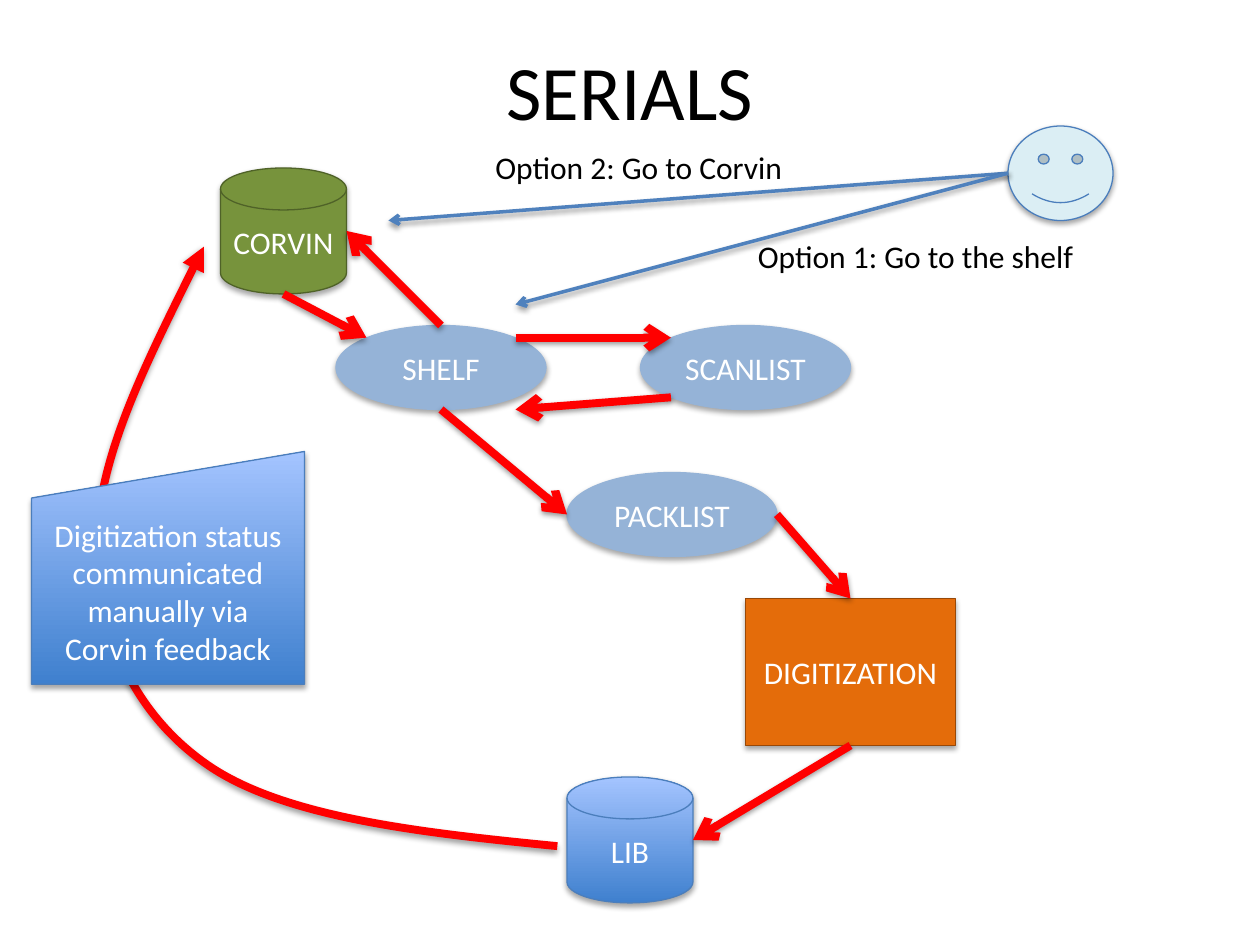
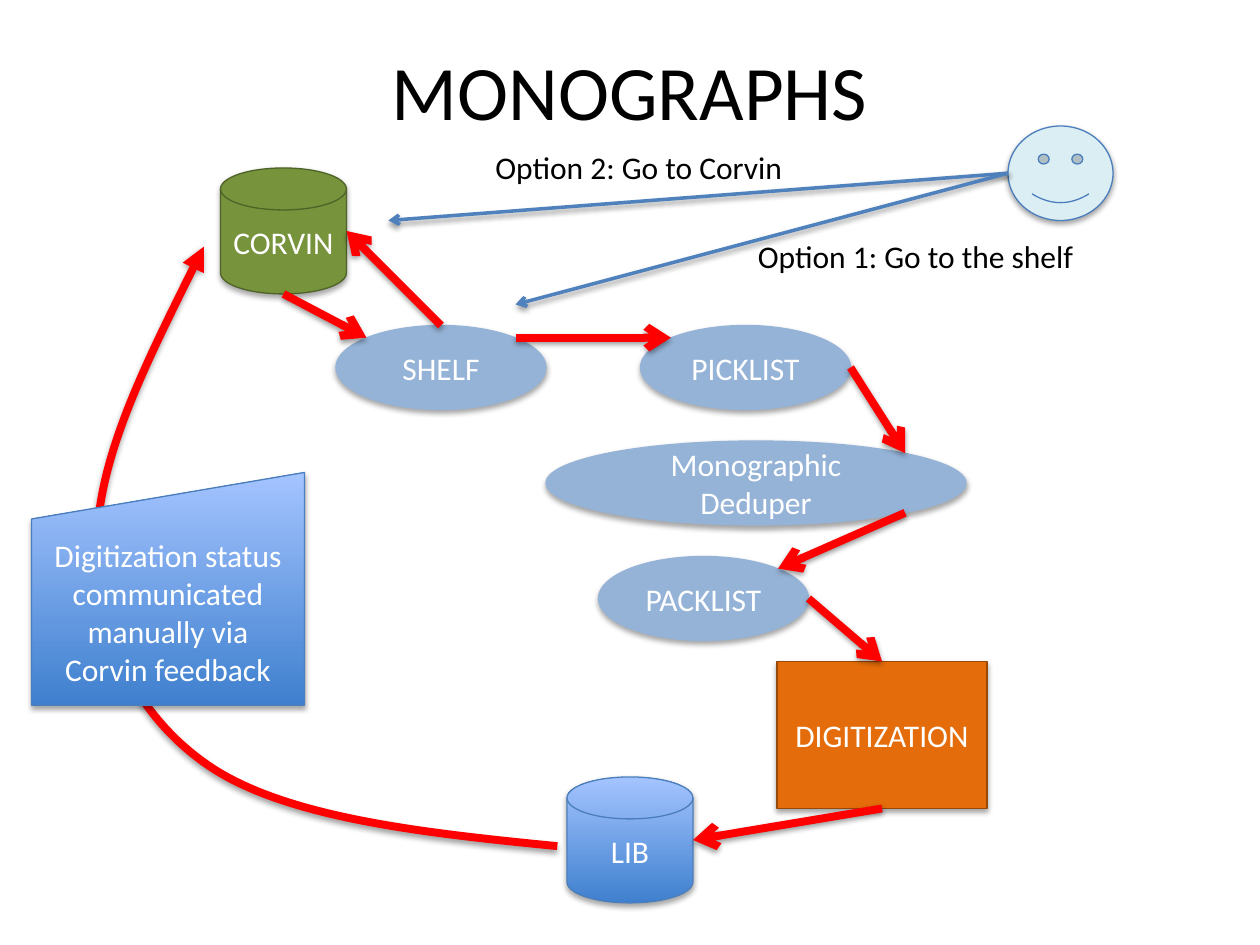
from dataclasses import dataclass
from typing import NamedTuple

from lxml.etree import SubElement
from pptx import Presentation
from pptx.dml.color import RGBColor
from pptx.enum.shapes import MSO_CONNECTOR as Connector, MSO_SHAPE as Preset
from pptx.enum.text import MSO_ANCHOR as Anchor, MSO_AUTO_SIZE as AutoSize, PP_ALIGN as Align
from pptx.oxml.ns import qn
from pptx.util import Pt


@dataclass(frozen=True)
class Theme:
    font: str = "Calibri"
    title_size: float = 44
    text_size: float = 18
    flow_width: float = 4.5
    option_width: float = 2
    outline_width: float = 0.75
    black: str = "000000"
    white: str = "FFFFFF"
    flow: str = "FF0000"
    option: str = "4F81BD"


class Shadow(NamedTuple):
    opacity: int
    distance: float
    blur: float = 3.15


class Style(NamedTuple):
    preset: Preset
    fill: tuple[str, ...]  # two colours run from bottom to top
    outline: str


class Point(NamedTuple):
    x: float
    y: float


class Node(NamedTuple):
    text: str
    style: Style
    left: float
    top: float
    width: float
    height: float

    def at(self, site: Point) -> Point:
        """Point at a site given in half widths and half heights from the centre."""
        return Point(self.left + self.width * (1 + site.x) / 2,
                     self.top + self.height * (1 + site.y) / 2)


class Arrow(NamedTuple):
    start: Point
    end: Point


class Flow(NamedTuple):
    title: str
    nodes: list[Node]
    arrows: list[Arrow]
    feedback_top: float


THEME = Theme()
SHAPE_SHADOW = Shadow(opacity=35, distance=1.8)
LINE_SHADOW = Shadow(opacity=38, distance=1.6)

BLUE = ("3F80CE", "A4C4FF")
STORE = Style(Preset.FLOWCHART_MAGNETIC_DISK, BLUE, "4B7EBC")
TRACKER = Style(Preset.FLOWCHART_MAGNETIC_DISK, ("77933C",), "4F6228")
PROCESS = Style(Preset.FLOWCHART_PROCESS, ("E46C0A",), "984807")
LIST = Style(Preset.OVAL, ("95B3D7",), "95B3D7")
USER = Style(Preset.SMILEY_FACE, ("DBEEF4",), "4B7EBC")
FEEDBACK = Style(Preset.FLOWCHART_MANUAL_INPUT, BLUE, "4B7EBC")

DIAGONAL = 0.71
TOP, BOTTOM = Point(0, -1), Point(0, 1)
LEFT, RIGHT = Point(-1, 0), Point(1, 0)
TOP_LEFT, TOP_RIGHT = Point(-DIAGONAL, -DIAGONAL), Point(DIAGONAL, -DIAGONAL)
BOTTOM_LEFT, BOTTOM_RIGHT = Point(-DIAGONAL, DIAGONAL), Point(DIAGONAL, DIAGONAL)
UNDER_RIGHT, ABOVE_RIGHT = Point(DIAGONAL, 1), Point(DIAGONAL, -1.5)


def list_node(text: str, left: float, top: float, width: float = 120) -> Node:
    return Node(text, LIST, left, top, width, 48)


def digitization_node(left: float, top: float) -> Node:
    return Node("DIGITIZATION", PROCESS, left, top, 120, 84)


LIBRARY = Node("LIB", STORE, 324, 444, 72, 72)
CORVIN = Node("CORVIN", TRACKER, 126, 96, 72, 72)
SHELF = list_node("SHELF", 192, 186)
READER = Node("", USER, 576, 72, 60, 54)
FEEDBACK_TEXT = "Digitization status communicated manually via Corvin feedback"
OPTIONS = [
    ("Option 1: Go to the shelf", 426, 132, 197),
    ("Option 2: Go to Corvin", 276, 81, 185),
]
OPTION_ENDS = [Point(222, 126), SHELF.at(ABOVE_RIGHT)]
# Start point, then three points for each Bezier segment
RETURN_CURVE = [
    Point(318.5, 483.5),
    Point(242, 476), Point(165.5, 467.5), Point(121.5, 439),
    Point(78, 410.5), Point(56, 363), Point(55.5, 313),
    Point(55, 263.5), Point(86, 202.5), Point(116.5, 141),
]


def link(source: Node, start: Point, target: Node, end: Point) -> Arrow:
    return Arrow(source.at(start), target.at(end))


def serials() -> Flow:
    scanlist = list_node("SCANLIST", 366, 186)
    packlist = list_node("PACKLIST", 324, 270)
    digitization = digitization_node(426, 342)
    return Flow("SERIALS", [digitization, scanlist, packlist], [
        link(SHELF, TOP_RIGHT, scanlist, TOP_LEFT),
        link(scanlist, BOTTOM_LEFT, SHELF, UNDER_RIGHT),
        link(SHELF, BOTTOM, packlist, LEFT),
        link(packlist, RIGHT, digitization, TOP),
        link(digitization, BOTTOM, LIBRARY, RIGHT),
    ], feedback_top=258)


def monographs() -> Flow:
    picklist = list_node("PICKLIST", 366, 186)
    deduper = list_node("Monographic Deduper", 312, 252, width=240)
    packlist = list_node("PACKLIST", 342, 318)
    digitization = digitization_node(444, 378)
    return Flow("MONOGRAPHS", [digitization, picklist, deduper, packlist], [
        link(SHELF, TOP_RIGHT, picklist, TOP_LEFT),
        link(picklist, RIGHT, deduper, TOP_RIGHT),
        link(deduper, BOTTOM_RIGHT, packlist, TOP_RIGHT),
        link(packlist, RIGHT, digitization, TOP),
        link(digitization, BOTTOM, LIBRARY, RIGHT),
    ], feedback_top=270)


def rgb(colour: str) -> RGBColor:
    return RGBColor.from_string(colour)


def write(frame, text: str, *, size: float = THEME.text_size, colour: str = THEME.black,
          align: Align = Align.LEFT, anchor: Anchor = Anchor.TOP, wrap: bool = True) -> None:
    frame.word_wrap = wrap
    frame.vertical_anchor = anchor
    para = frame.paragraphs[0]
    para.alignment = align
    span = para.add_run()
    span.text = text
    span.font.name = THEME.font
    span.font.size = Pt(size)
    span.font.color.rgb = rgb(colour)


def add_shadow(shape, shadow: Shadow) -> None:
    effects = SubElement(shape.element.spPr, qn("a:effectLst"))
    outer = SubElement(effects, qn("a:outerShdw"), blurRad=str(Pt(shadow.blur)),
                       dist=str(Pt(shadow.distance)), dir="5400000", rotWithShape="0")
    colour = SubElement(outer, qn("a:srgbClr"), val=THEME.black)
    SubElement(colour, qn("a:alpha"), val=str(shadow.opacity * 1000))


def draw_node(page, node: Node) -> None:
    style = node.style
    shape = page.shapes.add_shape(style.preset, Pt(node.left), Pt(node.top),
                                  Pt(node.width), Pt(node.height))
    if len(style.fill) == 1:
        shape.fill.solid()
        shape.fill.fore_color.rgb = rgb(style.fill[0])
    else:
        shape.fill.gradient()
        shape.fill.gradient_angle = 90
        for stop, colour in zip(shape.fill.gradient_stops, style.fill):
            stop.color.rgb = rgb(colour)
    shape.line.color.rgb = rgb(style.outline)
    shape.line.width = Pt(THEME.outline_width)
    add_shadow(shape, SHAPE_SHADOW)
    if node.text:
        write(shape.text_frame, node.text, colour=THEME.white,
              align=Align.CENTER, anchor=Anchor.MIDDLE)


def style_arrow(shape, colour: str, width: float, head: str) -> None:
    shape.line.color.rgb = rgb(colour)
    shape.line.width = Pt(width)
    SubElement(shape.element.spPr.find(qn("a:ln")), qn("a:tailEnd"), type=head)
    add_shadow(shape, LINE_SHADOW)


def draw_arrow(page, arrow: Arrow, colour: str, width: float) -> None:
    ends = [Pt(value) for point in arrow for value in point]
    style_arrow(page.shapes.add_connector(Connector.STRAIGHT, *ends), colour, width, "arrow")


def draw_return_curve(page) -> None:
    """Outline the control points, then turn each three straight steps into a Bezier."""
    start, *controls = [(Pt(point.x), Pt(point.y)) for point in RETURN_CURVE]
    builder = page.shapes.build_freeform(*start)
    builder.add_line_segments(controls, close=False)
    curve = builder.convert_to_shape()
    steps = curve.element.xpath(".//a:lnTo")
    for first in range(0, len(steps), 3):
        trio = steps[first:first + 3]
        bezier = SubElement(trio[0].getparent(), qn("a:cubicBezTo"))
        for step in trio:
            bezier.append(step[0])
            step.getparent().remove(step)
    curve.fill.background()
    style_arrow(curve, THEME.flow, THEME.flow_width, "triangle")


def draw_title(page, text: str) -> None:
    title = page.shapes.title
    title.left, title.top, title.width, title.height = Pt(36), Pt(6), Pt(648), Pt(90)
    write(title.text_frame, text, size=THEME.title_size,
          align=Align.CENTER, anchor=Anchor.MIDDLE)


def draw_options(page) -> None:
    draw_node(page, READER)
    for end in OPTION_ENDS:
        draw_arrow(page, Arrow(READER.at(LEFT), end), THEME.option, THEME.option_width)
    for text, left, top, width in OPTIONS:
        box = page.shapes.add_textbox(Pt(left), Pt(top), Pt(width), Pt(29))
        write(box.text_frame, text, wrap=False)
        box.text_frame.auto_size = AutoSize.SHAPE_TO_FIT_TEXT


def draw_flow(deck, flow: Flow) -> None:
    page = deck.slides.add_slide(deck.slide_layouts.get_by_name("Title Only"))
    draw_title(page, flow.title)
    for node in [LIBRARY, CORVIN, SHELF, *flow.nodes]:
        draw_node(page, node)
    shelf_loop = [link(CORVIN, BOTTOM, SHELF, TOP_LEFT), link(SHELF, TOP, CORVIN, RIGHT)]
    for arrow in shelf_loop + flow.arrows:
        draw_arrow(page, arrow, THEME.flow, THEME.flow_width)
    draw_return_curve(page)
    draw_options(page)
    draw_node(page, Node(FEEDBACK_TEXT, FEEDBACK, 18, flow.feedback_top, 156, 133))


def main() -> None:
    deck = Presentation()
    deck.slide_width, deck.slide_height = Pt(720), Pt(540)
    for flow in (serials(), monographs()):
        draw_flow(deck, flow)
    deck.save("out.pptx")


if __name__ == "__main__":
    main()
